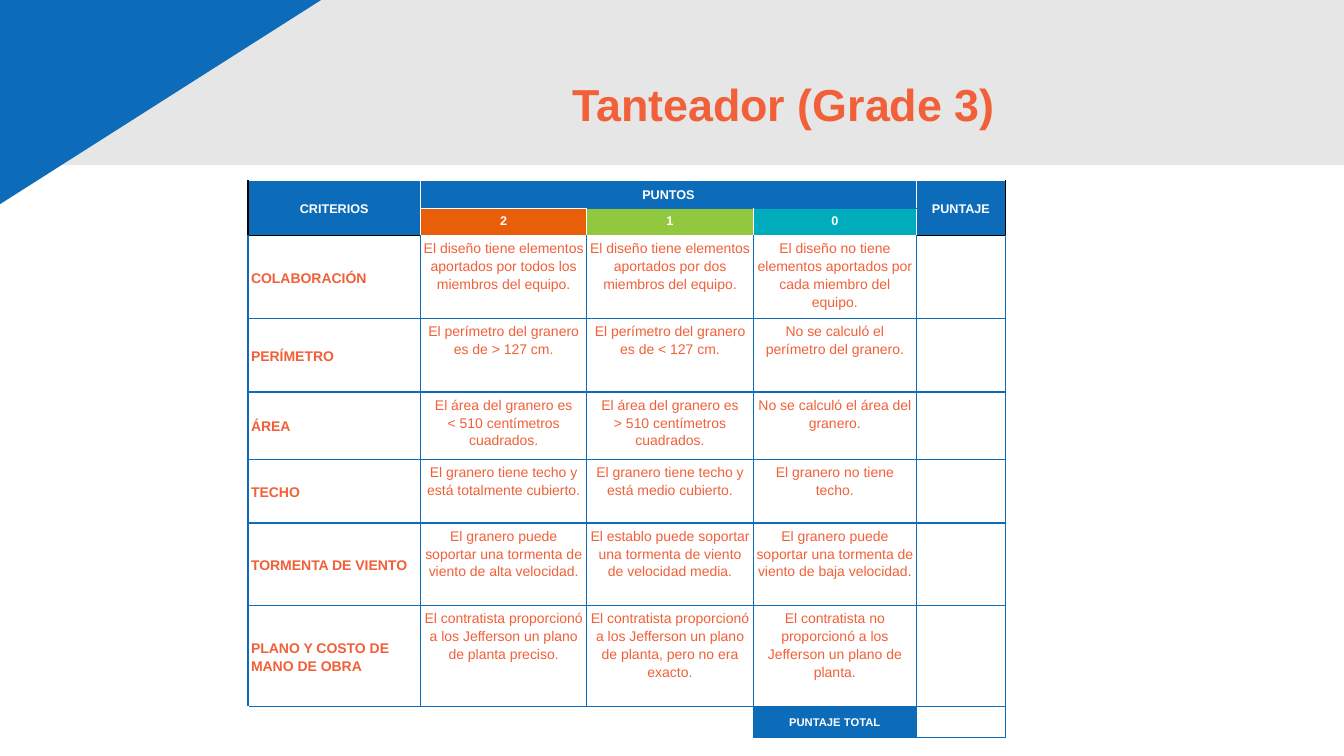
from lxml import etree
from pptx import Presentation
from pptx.dml.color import RGBColor
from pptx.enum.shapes import MSO_SHAPE as Shape
from pptx.enum.text import MSO_ANCHOR as Anchor, PP_ALIGN as Align
from pptx.oxml.ns import qn
from pptx.util import Inches, Pt

COLORS = {
    "blue": "0D6CB9", "band": "E7E6E6", "coral": "F16038", "white": "FFFFFF",
    "black": "000000", "orange": "E95E09", "green": "92C83E", "teal": "00ACBB",
}
COLUMN_WIDTHS = [1.71, 1.65, 1.65, 1.62, 0.88]
ROW_HEIGHTS = [0.28, 0.27, 0.82, 0.73, 0.67, 0.63, 0.82, 1, 0.31]
SCORES = [("2", "orange"), ("1", "green"), ("0", "teal")]
CRITERIA = [
    ("COLABORACIÓN",
     "El diseño tiene elementos aportados por todos los miembros del equipo.",
     "El diseño tiene elementos aportados por dos miembros del equipo.",
     "El diseño no tiene elementos aportados por cada miembro del equipo."),
    ("PERÍMETRO",
     "El perímetro del granero es de > 127 cm.",
     "El perímetro del granero es de < 127 cm.",
     "No se calculó el perímetro del granero."),
    ("ÁREA",
     "El área del granero es\n< 510 centímetros cuadrados.",
     "El área del granero es\n> 510 centímetros cuadrados.",
     "No se calculó el área del granero."),
    ("TECHO",
     "El granero tiene techo y está totalmente cubierto.",
     "El granero tiene techo y está medio cubierto.",
     "El granero no tiene techo."),
    ("TORMENTA DE VIENTO",
     "El granero puede soportar una tormenta de viento de alta velocidad.",
     "El establo puede soportar una tormenta de viento de velocidad media.",
     "El granero puede soportar una tormenta de viento de baja velocidad."),
    ("PLANO Y COSTO DE MANO DE OBRA",
     "El contratista proporcionó a los Jefferson un plano de planta preciso.",
     "El contratista proporcionó a los Jefferson un plano de planta, pero no era exacto.",
     "El contratista no proporcionó a los Jefferson un plano de planta."),
]


def rgb(name):
    """Return the named colour."""
    return RGBColor.from_string(COLORS[name])


def write_text(frame, text, size=10, color="coral", bold=False, align=Align.CENTER, spacing=1.15):
    """Fill a text frame with one paragraph per line of text."""
    frame.text = text
    for paragraph in frame.paragraphs:
        paragraph.alignment = align
        paragraph.line_spacing = spacing
        for run in paragraph.runs:
            run.font.name = "Arial"
            run.font.size = Pt(size)
            run.font.bold = bold
            run.font.color.rgb = rgb(color)
        if not paragraph.runs:
            paragraph._p.get_or_add_endParaRPr().set("sz", str(size * 100))


def add_block(slide, preset, box, color):
    """Add a plain filled shape."""
    shape = slide.shapes.add_shape(preset, *map(Inches, box))
    shape.shadow.inherit = False
    shape.fill.solid()
    shape.fill.fore_color.rgb = rgb(color)
    shape.line.fill.background()
    return shape


def add_header(slide, left, top, width, height):
    """Draw the band, the corner triangle and the title over them."""
    add_block(slide, Shape.RECTANGLE, (left, top, width, height), "band")
    corner = add_block(slide, Shape.RIGHT_TRIANGLE, (left - 2.31, top - 1.53, 8.46, 5.38), "blue")
    corner.rotation = 180
    corner._element.spPr.xfrm.set("flipH", "1")
    title = slide.shapes.title
    title.left, title.top = Inches(left + 0.53), Inches(top + 0.53)
    title.width, title.height = Inches(9.7), Inches(1.45)
    title.text_frame.vertical_anchor = Anchor.MIDDLE
    write_text(title.text_frame, "Tanteador (Grade 3)", size=32, bold=True,
               align=Align.RIGHT, spacing=0.9)
    slide.shapes._spTree.append(title._element)


def edge_colors(row, column):
    """Return the left, right, top and bottom border colours of a cell."""
    outer = column in (0, 4)
    if row < 2 and outer:
        sides = ("black", "white") if column == 0 else ("white", "black")
        return *sides, "white", "black"
    if row == 0:
        return "white", "white", "white", "white" if column == 1 else "blue"
    if row == 1:
        return "white", "white", "white" if column == 1 else "blue", "white"
    if row == 2:
        return "blue", "blue", "black" if outer else "white", "blue"
    if row == len(ROW_HEIGHTS) - 1 and column < 3:
        return "white", "blue" if column == 2 else "white", "blue", "white"
    return ("blue",) * 4


def draw_borders(cell, colors):
    """Put a one-point line on each side of a cell."""
    properties = cell._tc.get_or_add_tcPr()
    for index, (side, color) in enumerate(zip("LRTB", colors)):
        line = etree.Element(qn(f"a:ln{side}"), w=str(Pt(1)))
        fill = etree.SubElement(line, qn("a:solidFill"))
        etree.SubElement(fill, qn("a:srgbClr"), val=COLORS[color])
        properties.insert(index, line)


def fill_cell(table, row, column, text="", fill="white", anchor=Anchor.MIDDLE, **text_format):
    """Give a cell its text, fill and margins."""
    cell = table.cell(row, column)
    cell.fill.solid()
    cell.fill.fore_color.rgb = rgb(fill)
    cell.margin_left = cell.margin_right = cell.margin_top = cell.margin_bottom = Inches(0.03)
    cell.vertical_anchor = anchor
    write_text(cell.text_frame, text, **text_format)


def add_rubric(slide, left, top, width, height):
    """Draw the scoring table."""
    box = map(Inches, (left, top, width, height))
    table = slide.shapes.add_table(len(ROW_HEIGHTS), len(COLUMN_WIDTHS), *box).table
    table.first_row = table.horz_banding = False
    for column, size in zip(table.columns, COLUMN_WIDTHS):
        column.width = Inches(size)
    for row, size in zip(table.rows, ROW_HEIGHTS):
        row.height = Inches(size)
    last = len(ROW_HEIGHTS) - 1
    for row in range(last + 1):
        for column in range(len(COLUMN_WIDTHS)):
            fill_cell(table, row, column)

    heading = {"size": 9, "color": "white", "bold": True}
    for column, text in [(0, "CRITERIOS"), (1, "PUNTOS"), (4, "PUNTAJE")]:
        fill_cell(table, 0, column, text, "blue", **heading)
    for column, (score, color) in enumerate(SCORES, 1):
        fill_cell(table, 1, column, score, color, Anchor.TOP, **heading)
    for row, (criterion, *levels) in enumerate(CRITERIA, 2):
        fill_cell(table, row, 0, criterion, bold=True, align=Align.LEFT)
        for column, level in enumerate(levels, 1):
            fill_cell(table, row, column, level, anchor=Anchor.TOP)
    fill_cell(table, last, 3, "PUNTAJE TOTAL", "blue", size=8, color="white", bold=True)

    for row in range(last + 1):
        for column in range(len(COLUMN_WIDTHS)):
            draw_borders(table.cell(row, column), edge_colors(row, column))
    for start, end in [((0, 0), (1, 0)), ((0, 1), (0, 3)), ((0, 4), (1, 4)), ((last, 0), (last, 2))]:
        table.cell(*start).merge(table.cell(*end))


def main():
    """Build and save the presentation."""
    presentation = Presentation()
    presentation.slide_width, presentation.slide_height = Inches(13.33), Inches(7.5)
    slide = presentation.slides.add_slide(presentation.slide_layouts[5])
    add_header(slide, -0.26, -0.19, 13.59, 1.83)
    add_rubric(slide, 2.46, 1.79, sum(COLUMN_WIDTHS), sum(ROW_HEIGHTS))
    presentation.save("out.pptx")


if __name__ == "__main__":
    main()
